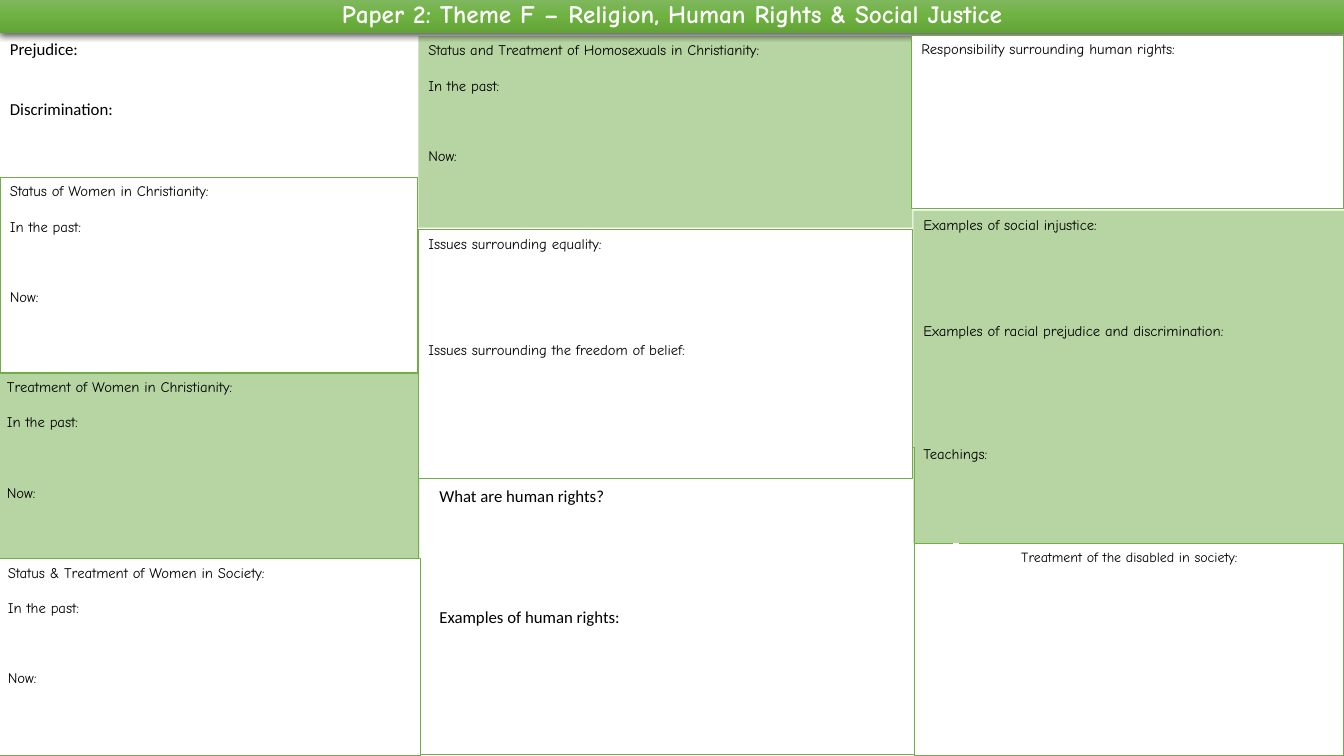
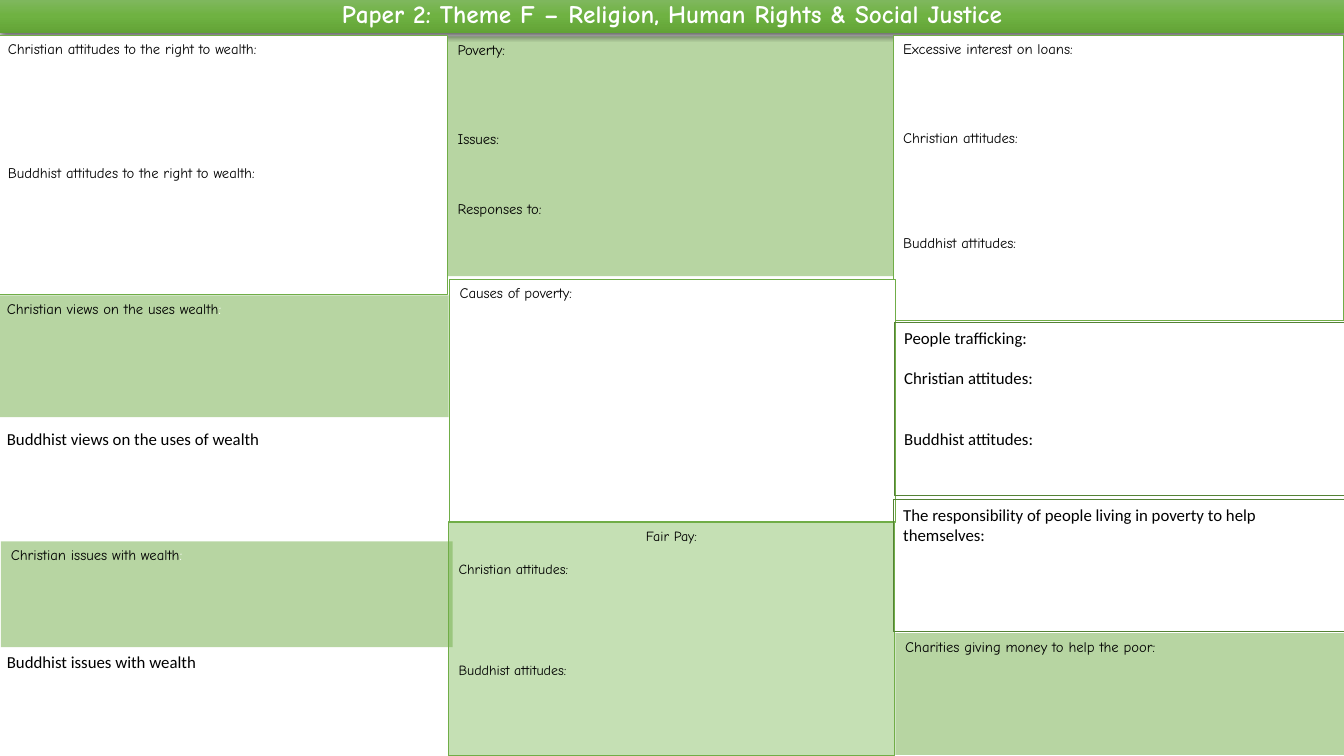
from lxml.etree import SubElement
from pptx import Presentation
from pptx.dml.color import RGBColor
from pptx.enum.shapes import MSO_SHAPE
from pptx.enum.text import MSO_ANCHOR, MSO_AUTO_SIZE, PP_ALIGN
from pptx.oxml import parse_xml
from pptx.oxml.ns import nsdecls, qn
from pptx.util import Inches, Pt

COLOURS = {
    "green": "70AD47", "dark": "548235", "pale": "C5E0B4",
    "white": "FFFFFF", "black": "000000",
    "band_top": "81B861", "band_middle": "6FB242", "band_foot": "62A336",
}
HAND, PRINT = "Comic Neue", "Calibri"
WIDTH, HEIGHT = 13.33, 7.5
LINE_SHARE = 1.2
TITLE = "Paper 2: Theme F – Religion, Human Rights & Social Justice"

STYLES = {
    "card": dict(fill="white", line="green", weight=1, font=HAND, size=10.5),
    "tint": dict(fill="green", opacity=50, font=HAND, size=10.5),
    "topic": dict(fill="white", line="green", weight=1, font=HAND, size=10, centred=True),
    "pale topic": dict(fill="pale", line="green", weight=1, font=HAND, size=10, centred=True),
    "frame": dict(line="green", weight=0.75, font=PRINT, size=12),
    "dark frame": dict(line="dark", weight=0.75, font=PRINT, size=12),
    "note": dict(font=PRINT, size=12),
    "patch": dict(fill="white", line="white", weight=1, font=PRINT, size=12),
}


def past_and_now(heading):
    return [(0, heading), (1, "In the past:"), (3, "Now:")]


BAND = "band"
RIGHTS = {
    "columns": {"left": (0, 4.15), "middle": (4.15, 4.9), "right": (9.06, 4.28), "patch": (9.46, 0.05)},
    "boxes": [
        ("topic", "right", 5.39, 2.11, (0.01, -0.02), [(0, "Treatment of the disabled in society:")]),
        ("tint", "middle", 0.36, 1.9, (0, 0),
         past_and_now("Status and Treatment of Homosexuals in Christianity:")),
        BAND,
        ("card", "left", 1.76, 1.94, (0, -0.01), past_and_now("Status of Women in Christianity:")),
        ("patch", "patch", 5.18, 1.24, (0, 0), []),
        ("card", "right", 0.35, 1.72, (-0.02, 0.01), [(0, "Responsibility surrounding human rights:")]),
        ("tint", "left", 3.7, 1.84, (-0.03, 0.04), past_and_now("Treatment of Women in Christianity:")),
        ("tint", "right", 2.09, 3.3, (0, 0),
         [(0, "Examples of social injustice:"),
          (5, "Examples of racial prejudice and discrimination:"), (6, "Teachings:")]),
        ("frame", "middle", 4.44, 3.05, (0, 0.02), []),
        ("card", "middle", 2.28, 2.47, (0, 0),
         [(0, "Issues surrounding equality:"), (5, "Issues surrounding the freedom of belief:")]),
        ("card", "left", 5.54, 1.96, (-0.02, 0.04), past_and_now("Status & Treatment of Women in Society:")),
        ("note", "middle", 4.77, 1.51, (0.11, -0.5),
         [(0, "What are human rights?"), (5, "Examples of human rights:")]),
        ("note", "left", 0.33, 0.91, (0, 0), [(0, "Prejudice:"), (2, "Discrimination:")]),
    ],
}
WEALTH = {
    "columns": {"left": (-0.03, 4.47), "middle": (4.45, 4.42), "right": (8.87, 4.47)},
    "boxes": [
        ("pale topic", "middle", 5.18, 2.32, (0, 0),
         [(0, "Fair Pay:"), (1, "Christian attitudes:"), (5, "Buddhist attitudes:")]),
        ("tint", "middle", 0.36, 2.38, (-0.01, 0),
         [(0, "Poverty:"), (4, "Issues:"), (3, "Responses to:")]),
        BAND,
        ("card", "left", 0.35, 2.57, (0.01, -0.01),
         [(0, "Christian attitudes to the right to wealth:"),
          (6, "Buddhist attitudes to the right to wealth:")]),
        ("tint", "left", 2.93, 1.21, (0, 0.01), [(0, "Christian views on the uses wealth", ":")]),
        ("card", "right", 0.35, 2.83, (-0.01, 0),
         [(0, "Excessive interest on loans:"), (4, "Christian attitudes:"), (5, "Buddhist attitudes:")]),
        ("card", "middle", 2.77, 2.41, (0.01, 0), [(0, "Causes of poverty:")]),
        ("dark frame", "right", 3.2, 1.72, (0, 0),
         [(0, "People trafficking:"), (1, "Christian attitudes:"), (2, "Buddhist attitudes:")]),
        ("dark frame", "right", 4.96, 1.31, (-0.01, 0.02),
         [(0, "The responsibility of people living in poverty to help themselves:")]),
        ("note", "left", 4.2, 0.3, (0, 0), [(0, "Buddhist views on the uses of wealth")]),
        ("tint", "left", 5.37, 1.05, (0.04, 0.01), [(0, "Christian issues with wealth", ":")]),
        ("note", "left", 6.42, 0.3, (0, 0), [(0, "Buddhist issues with wealth")]),
        ("tint", "right", 6.28, 1.21, (0.01, 0.01), [(0, "Charities giving money to help the poor:")]),
    ],
}


def colour(name):
    return RGBColor.from_string(COLOURS[name])


def add_run(paragraph, text, font, size, ink, bold=False):
    run = paragraph.add_run()
    run.text = text
    run.font.name, run.font.size, run.font.bold = font, Pt(size), bold
    run.font.color.rgb = colour(ink)


def add_band(slide):
    band = slide.shapes.title
    slide.shapes._spTree.append(band._element)
    band.left, band.top = Inches(0), Inches(-0.02)
    band.width, band.height = Inches(WIDTH), Inches(0.35)
    stops = "".join(
        f'<a:gs pos="{share * 1000}"><a:srgbClr val="{COLOURS[name]}"/></a:gs>'
        for share, name in ((0, "band_top"), (50, "band_middle"), (100, "band_foot")))
    properties = band._element.spPr
    properties.append(parse_xml(
        f'<a:gradFill {nsdecls("a")} rotWithShape="1"><a:gsLst>{stops}</a:gsLst>'
        '<a:lin ang="5400000" scaled="0"/></a:gradFill>'))
    properties.append(parse_xml(
        f'<a:effectLst {nsdecls("a")}><a:outerShdw blurRad="{Pt(4.5)}" dist="{Pt(1.5)}" '
        f'dir="5400000" algn="ctr" rotWithShape="0"><a:srgbClr val="{COLOURS["black"]}">'
        '<a:alpha val="63000"/></a:srgbClr></a:outerShdw></a:effectLst>'))
    frame = band.text_frame
    frame.auto_size = MSO_AUTO_SIZE.NONE
    frame.vertical_anchor = MSO_ANCHOR.MIDDLE
    heading = frame.paragraphs[0]
    heading.alignment, heading.line_spacing = PP_ALIGN.CENTER, 0.9
    add_run(heading, TITLE, HAND, 18, "white", True)


def paint(box, style):
    box.shadow.inherit = False
    if "fill" in style:
        box.fill.solid()
        box.fill.fore_color.rgb = colour(style["fill"])
        if "opacity" in style:
            tone = box._element.spPr.find(qn("a:solidFill"))[0]
            SubElement(tone, qn("a:alpha")).set("val", str(style["opacity"] * 1000))
    else:
        box.fill.background()
    if "line" in style:
        box.line.color.rgb = colour(style["line"])
        box.line.width = Pt(style["weight"])
    else:
        box.line.fill.background()


def write(frame, prompts, style):
    frame.word_wrap = True
    frame.vertical_anchor = MSO_ANCHOR.TOP
    for index, (gap, prompt, *ending) in enumerate(prompts):
        paragraph = frame.add_paragraph() if index else frame.paragraphs[0]
        centred = style.get("centred") and index == 0
        paragraph.alignment = PP_ALIGN.CENTER if centred else PP_ALIGN.LEFT
        if gap:
            paragraph.space_before = Pt(round(gap * LINE_SHARE * style["size"], 1))
        add_run(paragraph, prompt, style["font"], style["size"], "black")
        for mark in ending:
            add_run(paragraph, mark, style["font"], style["size"], "white")


def add_box(slide, columns, kind, column, top, height, nudge, prompts):
    style = STYLES[kind]
    left, width = (base + shift for base, shift in zip(columns[column], nudge))
    area = [Inches(length) for length in (left, top, width, height)]
    if kind == "note":
        box = slide.shapes.add_textbox(*area)
    else:
        box = slide.shapes.add_shape(MSO_SHAPE.RECTANGLE, *area)
        paint(box, style)
    write(box.text_frame, prompts, style)


def main():
    deck = Presentation()
    deck.slide_width, deck.slide_height = Inches(WIDTH), Inches(HEIGHT)
    for sheet in (RIGHTS, WEALTH):
        slide = deck.slides.add_slide(deck.slide_layouts[5])
        for entry in sheet["boxes"]:
            if entry == BAND:
                add_band(slide)
            else:
                add_box(slide, sheet["columns"], *entry)
    deck.save("out.pptx")


if __name__ == "__main__":
    main()
